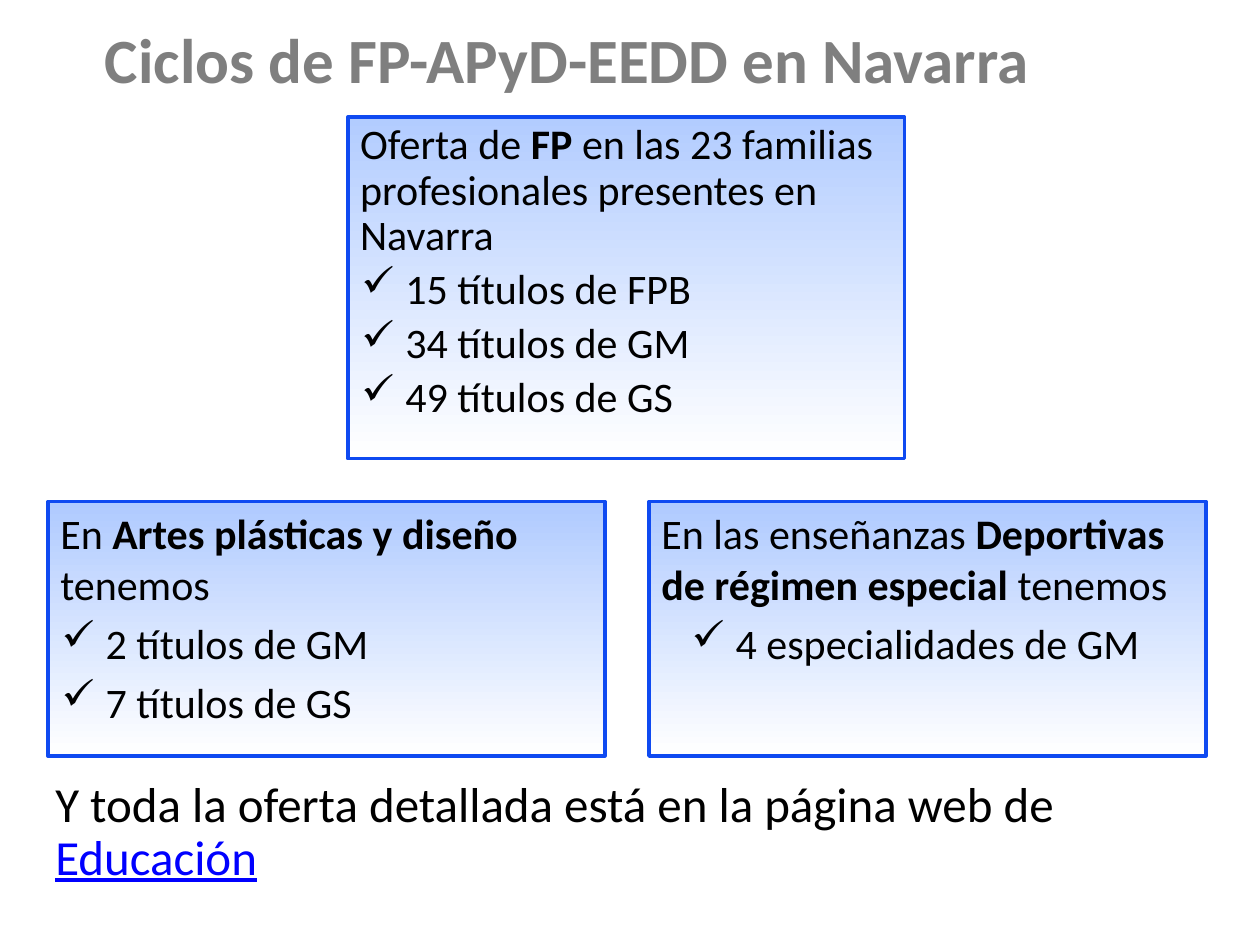
import pptx
import pptx.dml.color
import pptx.enum.shapes
import pptx.enum.text
import pptx.oxml.ns
import pptx.util
from lxml import etree

COLUMNS, ROWS = 100, 75


def color(value):
    return pptx.dml.color.RGBColor.from_string(value)


def add_text(paragraph, text, size=24, bold=False, fill="000000", underline=None):
    run = paragraph.add_run()
    run.text = text
    font = run.font
    font.name, font.size, font.bold = "Calibri", pptx.util.Pt(size), bold
    font.underline = underline
    font.color.rgb = color(fill)


def add_check(paragraph, indent):
    properties = paragraph._p.get_or_add_pPr()
    properties.set("marL", str(pptx.util.Inches(indent + 0.36)))
    properties.set("indent", str(pptx.util.Inches(-0.35)))
    etree.SubElement(properties, pptx.oxml.ns.qn("a:buChar"), char="✓")


class OfferSlide:
    border = "0F4AF1"
    title_gray = "7F7F7F"
    link_blue = "0000FF"
    gap = 5

    def __init__(self, presentation):
        self.width = presentation.slide_width
        self.height = presentation.slide_height
        self.slide = presentation.slides.add_slide(presentation.slide_layouts[5])

    def area(self, column, row, columns, rows):
        across, down = self.width / COLUMNS, self.height / ROWS
        return [int(length) for length in
                (column * across, row * down, columns * across, rows * down)]

    def title(self, text, *place):
        shape = self.slide.shapes.title
        shape.left, shape.top, shape.width, shape.height = self.area(*place)
        frame = shape.text_frame
        frame.margin_left = frame.margin_right = 0
        frame.margin_top = frame.margin_bottom = 0
        frame.vertical_anchor = pptx.enum.text.MSO_ANCHOR.TOP
        frame.auto_size = pptx.enum.text.MSO_AUTO_SIZE.NONE
        paragraph = frame.paragraphs[0]
        paragraph.alignment = pptx.enum.text.PP_ALIGN.CENTER
        add_text(paragraph, text, size=36, bold=True, fill=self.title_gray)

    def offer_box(self, intro, checks, *place, top="AFCAFF", spacing=1.0, indent=0):
        shape = self.slide.shapes.add_shape(
            pptx.enum.shapes.MSO_SHAPE.RECTANGLE, *self.area(*place))
        shape.shadow.inherit = False
        shape.fill.gradient()
        shape.fill.gradient_angle = 270
        for stop, value in zip(shape.fill.gradient_stops, (top, "FFFFFF")):
            stop.color.rgb = color(value)
        shape.line.color.rgb = color(self.border)
        shape.line.width = pptx.util.Pt(2)
        frame = shape.text_frame
        frame.word_wrap = True
        frame.vertical_anchor = pptx.enum.text.MSO_ANCHOR.TOP
        for text, bold in intro:
            add_text(frame.paragraphs[0], text, bold=bold)
        for text in checks:
            paragraph = frame.add_paragraph()
            add_check(paragraph, indent)
            paragraph.space_before = pptx.util.Pt(self.gap)
            add_text(paragraph, text)
        for paragraph in frame.paragraphs:
            paragraph.alignment = pptx.enum.text.PP_ALIGN.LEFT
            paragraph.line_spacing = spacing

    def closing(self, text, link, *place):
        frame = self.slide.shapes.add_textbox(*self.area(*place)).text_frame
        frame.word_wrap = True
        paragraph = frame.paragraphs[0]
        paragraph.line_spacing = 0.9
        add_text(paragraph, text, size=28)
        add_text(paragraph, link, size=28, fill=self.link_blue, underline=True)


def main():
    presentation = pptx.Presentation()
    presentation.slide_width = pptx.util.Inches(10)
    presentation.slide_height = pptx.util.Inches(7.5)
    offer = OfferSlide(presentation)
    box_width, lower_row, lower_height = 44.2, 39.8, 20.2

    offer.title("Ciclos de FP-APyD-EEDD en Navarra", 1.3, 1.6, 87.4, 8.1)
    offer.offer_box(
        [("Oferta de ", False), ("FP", True),
         (" en las 23 familias profesionales presentes en Navarra", False)],
        ["15 títulos de FPB", "34 títulos de GM", "49 títulos de GS"],
        27.6, 9.3, box_width, 27.1, top="B2CCFF", spacing=0.9)
    offer.offer_box(
        [("En", False), (" Artes plásticas y diseño", True), (" tenemos", False)],
        ["2 títulos de GM", "7 títulos de GS"],
        3.8, lower_row, box_width, lower_height)
    offer.offer_box(
        [("En las enseñanzas ", False), ("Deportivas de régimen especial", True),
         (" tenemos", False)],
        ["4 especialidades de GM"],
        51.5, lower_row, box_width, lower_height, indent=0.23)
    offer.closing("Y toda la oferta detallada está en la página web de ",
                  "Educación", 3.4, 61.4, 92.2, 9.4)
    presentation.save("out.pptx")


if __name__ == "__main__":
    main()
